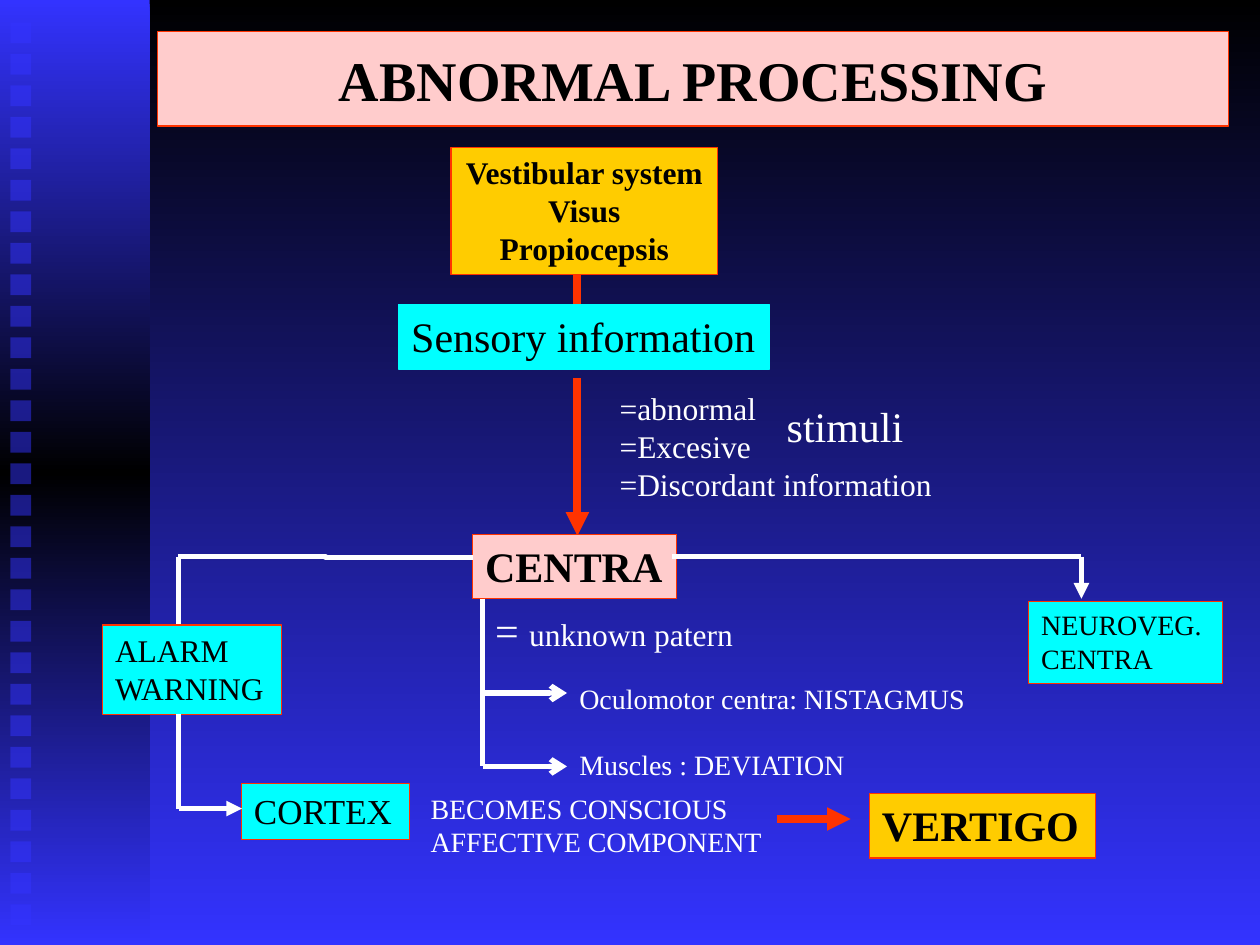
"""Build the abnormal processing flow slide."""
from copy import deepcopy

from lxml.etree import SubElement
from pptx import Presentation
from pptx.dml.color import RGBColor
from pptx.enum.shapes import MSO_CONNECTOR, MSO_SHAPE
from pptx.enum.text import MSO_ANCHOR, MSO_AUTO_SIZE, PP_ALIGN
from pptx.oxml.ns import qn
from pptx.util import Cm, Pt

FONT = "Times New Roman"
COLORS = {
    "black": "000000", "white": "FFFFFF", "blue": "3333FF", "red": "FF3300",
    "pink": "FFCCCC", "gold": "FFCC00", "cyan": "00FFFF",
}

TITLE = ("ABNORMAL PROCESSING", (3.18, 0.64, 21.59, 1.9))

# left, top, width, height, fill, line, size, bold, centred, lines
BOXES = [
    (9.09, 2.97, 5.38, 2.57, "gold", "red", 18, True, True,
     ["Vestibular system", "Visus", "Propiocepsis"]),
    (8.04, 6.14, 7.47, 1.3, "cyan", "cyan", 24, False, False, ["Sensory information"]),
    (9.53, 10.77, 4.11, 1.3, "pink", "red", 24, True, False, ["CENTRA"]),
    (2.07, 12.6, 3.61, 1.8, "cyan", "red", 18, False, False, ["ALARM", "WARNING"]),
    (4.87, 15.8, 3.38, 1.12, "cyan", "red", 20, False, False, ["CORTEX"]),
    (17.53, 16, 4.55, 1.3, "gold", "red", 24, True, False, ["VERTIGO"]),
    (20.74, 12.13, 3.91, 1.65, "cyan", "red", 16, False, False, ["NEUROVEG.", "CENTRA"]),
]

LABELS = [
    (12.24, 7.72, 6.81, 2.54, 18, ["=abnormal", "=Excesive", "=Discordant information"]),
    (15.61, 7.95, 3.3, 1.27, 24, ["stimuli"]),
    (9.73, 12.07, 5.31, 1.27, 18, [[("= ", 24), ("unknown patern", 18)]]),
    (11.43, 13.61, 8.36, 0.94, 16, ["Oculomotor centra: NISTAGMUS"]),
    (11.43, 14.94, 5.94, 0.94, 16, ["Muscles : DEVIATION"]),
    (8.43, 15.83, 7.19, 1.63, 16, ["BECOMES CONSCIOUS", "AFFECTIVE COMPONENT"]),
]

LINKS_BEHIND = [
    (11.64, 5.51, 11.64, 6.35, "red", None),
    (11.64, 7.62, 11.64, 10.8, "red", "triangle"),
    (3.6, 11.22, 3.6, 12.7, "white", None),
]
LINKS_FRONT = [
    (9.73, 12.07, 9.73, 15.45, "white", None),
    (9.73, 13.97, 11.43, 13.97, "white", "arrow"),
    (9.73, 15.45, 11.43, 15.45, "white", "arrow"),
    (9.53, 11.24, 3.6, 11.22, "white", None),
    (3.6, 14.4, 3.6, 16.3, "white", None),
    (3.6, 16.3, 4.88, 16.3, "white", "triangle"),
    (15.66, 16.51, 17.15, 16.51, "red", "triangle"),
    (21.8, 11.22, 13.55, 11.22, "white", None),
    (21.8, 11.22, 21.8, 12.07, "white", "triangle"),
]
LINE_WIDTHS = {"red": 4.5, "white": 3}
SQUARES = {"count": 29, "left": 0.21, "top": 0.45, "size": 0.42, "pitch": 0.635}


def rgb(name):
    return RGBColor.from_string(COLORS[name])


def set_gradient(fill, start, end):
    fill.gradient()
    fill.gradient_angle = 270
    for stop, name, pos in zip(fill.gradient_stops, (start, end), (0, 1)):
        stop.color.rgb = rgb(name)
        stop.position = pos


def add_rect(s, box, fill=None, line=None):
    sp = s.shapes.add_shape(MSO_SHAPE.RECTANGLE, *map(Cm, box))
    sp.shadow.inherit = False
    if fill:
        sp.fill.solid()
        sp.fill.fore_color.rgb = rgb(fill)
    if line:
        sp.line.color.rgb = rgb(line)
        sp.line.width = Pt(0.75)
    else:
        sp.line.fill.background()
    return sp


def write(sp, lines, size, color, bold=False, centred=False, fit=True):
    tf = sp.text_frame
    tf.word_wrap = not fit
    tf.auto_size = MSO_AUTO_SIZE.SHAPE_TO_FIT_TEXT if fit else MSO_AUTO_SIZE.NONE
    tf.vertical_anchor = MSO_ANCHOR.TOP if fit else MSO_ANCHOR.MIDDLE
    for i, line in enumerate(lines):
        p = tf.add_paragraph() if i else tf.paragraphs[0]
        p.alignment = PP_ALIGN.CENTER if centred else PP_ALIGN.LEFT
        p.font.name, p.font.size, p.font.bold = FONT, Pt(size), bold
        p.font.color.rgb = rgb(color)
        for text, run_size in [(line, size)] if isinstance(line, str) else line:
            r = p.add_run()
            r.text = text
            if run_size != size:
                r.font.size = Pt(run_size)


def add_links(s, links):
    for x1, y1, x2, y2, color, head in links:
        straight = x1 == x2 or y1 == y2
        kind = MSO_CONNECTOR.STRAIGHT if straight else MSO_CONNECTOR.ELBOW
        link = s.shapes.add_connector(kind, *map(Cm, (x1, y1, x2, y2)))
        link.line.color.rgb = rgb(color)
        link.line.width = Pt(LINE_WIDTHS[color])
        if head:
            ln = link._element.spPr.find(qn("a:ln"))
            SubElement(ln, qn("a:tailEnd"), type=head)
        SubElement(link._element.spPr, qn("a:effectLst"))


def add_side_band(s):
    band = add_rect(s, (0, 0, 3.02, 19.05))
    set_gradient(band.fill, "blue", "blue")
    stops = band._element.spPr.find(".//" + qn("a:gsLst"))
    middle = deepcopy(stops[0])
    middle.set("pos", "50000")
    middle[0].set("val", COLORS["black"])
    stops.insert(1, middle)
    size = SQUARES["size"]
    for i in range(SQUARES["count"]):
        top = SQUARES["top"] + i * SQUARES["pitch"]
        sp = add_rect(s, (SQUARES["left"], top, size, size), "blue")
        color = sp._element.spPr.find(".//" + qn("a:srgbClr"))
        SubElement(color, qn("a:alpha"), val="50000")


def main():
    prs = Presentation()
    prs.slide_width, prs.slide_height = Cm(25.4), Cm(19.05)
    s = prs.slides.add_slide(prs.slide_layouts[6])
    set_gradient(s.background.fill, "black", "blue")
    add_side_band(s)
    text, box = TITLE
    write(add_rect(s, box, "pink", "red"), [text], 32, "black", True, True, fit=False)
    add_links(s, LINKS_BEHIND)
    for *box, fill, line, size, bold, centred, lines in BOXES:
        write(add_rect(s, box, fill, line), lines, size, "black", bold, centred)
    add_links(s, LINKS_FRONT)
    for *box, size, lines in LABELS:
        write(s.shapes.add_textbox(*map(Cm, box)), lines, size, "white")
    prs.save("out.pptx")


if __name__ == "__main__":
    main()
